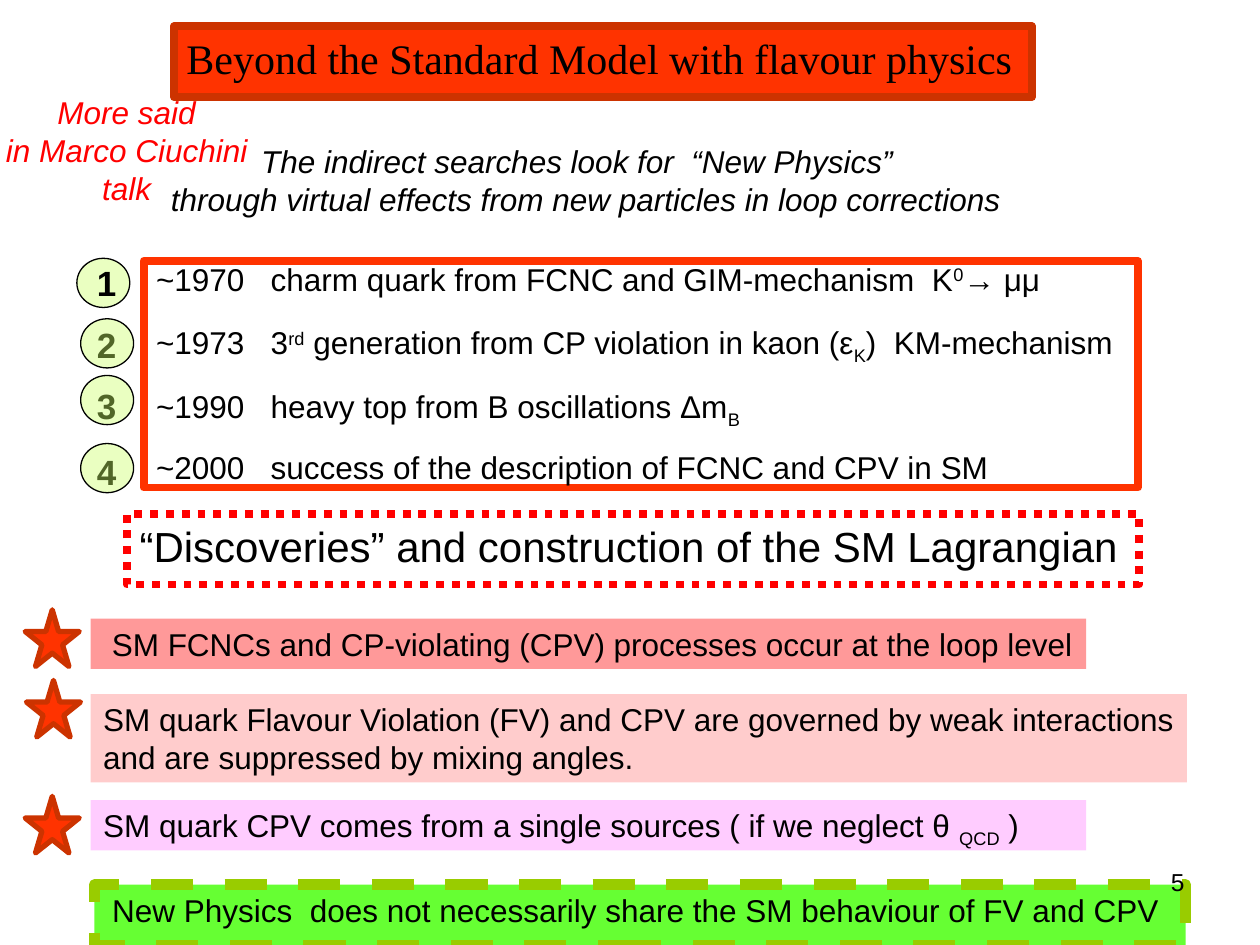
"""Build a slide on physics beyond the Standard Model with flavour."""
from dataclasses import dataclass
from typing import NamedTuple, Optional

from lxml.etree import SubElement
from pptx import Presentation
from pptx.dml.color import RGBColor
from pptx.enum.dml import MSO_LINE
from pptx.enum.shapes import MSO_SHAPE as Preset
from pptx.enum.text import MSO_ANCHOR as Anchor, MSO_AUTO_SIZE as AutoSize, PP_ALIGN as Align
from pptx.oxml.ns import qn
from pptx.util import Emu, Pt

PX = 9144
COLORS = {
    "black": "000000", "red": "FF0000", "orange": "FF3300", "rust": "CC3300",
    "salmon": "FF9999", "rose": "FFCCCC", "lilac": "FFCCFF",
    "green": "66FF33", "olive": "99CC00", "lime": "CCFF66",
}


class Area(NamedTuple):
    left: int
    top: int
    width: int
    height: int


class Span(NamedTuple):
    text: str
    baseline: int = 0


class Outline(NamedTuple):
    color: str
    width: float
    dash: Optional[MSO_LINE] = None


@dataclass(frozen=True)
class TextStyle:
    size: int = 18
    color: str = "black"
    font: str = "Arial"
    bold: bool = False
    italic: bool = False
    align: Align = Align.LEFT
    wrap: bool = False
    line_spacing: float = 1.0
    gap: int = 0


@dataclass(frozen=True)
class Panel:
    area: Area
    lines: tuple
    style: TextStyle = TextStyle()
    fill: Optional[str] = None
    outline: Optional[Outline] = None


def rgb(name: str) -> RGBColor:
    return RGBColor.from_string(COLORS[name])


def emu(area: Area) -> list:
    return [Emu(value * PX) for value in area]


def apply(target, values: dict) -> None:
    for name, value in values.items():
        setattr(target, name, value)


def paint(shape, fill: Optional[str], outline: Optional[Outline]) -> None:
    if fill:
        shape.fill.solid()
        shape.fill.fore_color.rgb = rgb(fill)
    else:
        shape.fill.background()
    if outline:
        shape.line.color.rgb = rgb(outline.color)
        apply(shape.line, {"width": Pt(outline.width), "dash_style": outline.dash})
    else:
        shape.line.fill.background()


def write(shape, lines: tuple, style: TextStyle) -> None:
    frame = shape.text_frame
    apply(frame, {
        "word_wrap": style.wrap, "auto_size": AutoSize.NONE, "vertical_anchor": Anchor.TOP,
    })
    for index, line in enumerate(lines):
        para = frame.add_paragraph() if index else frame.paragraphs[0]
        apply(para, {
            "alignment": style.align, "line_spacing": style.line_spacing,
            "space_before": Pt(style.gap if index else 0),
        })
        for part in (Span(line),) if isinstance(line, str) else line:
            span = para.add_run()
            span.text = part.text
            apply(span.font, {
                "size": Pt(style.size), "name": style.font,
                "bold": style.bold, "italic": style.italic,
            })
            span.font.color.rgb = rgb(style.color)
            if part.baseline:
                span._r.get_or_add_rPr().set("baseline", str(part.baseline * 1000))


def add_preset(page, preset: Preset, area: Area, fill: Optional[str], outline: Optional[Outline]):
    shape = page.shapes.add_shape(preset, *emu(area))
    shape.shadow.inherit = False
    paint(shape, fill, outline)
    return shape


def add_panel(page, panel: Panel) -> None:
    if panel.fill or panel.outline:
        box = add_preset(page, Preset.RECTANGLE, panel.area, panel.fill, panel.outline)
    else:
        box = page.shapes.add_textbox(*emu(panel.area))
    write(box, panel.lines, panel.style)


def add_badge(page, left: int, top: int) -> None:
    area = Area(left, top, 42, 39)
    badge = add_preset(page, Preset.OVAL, area, "lime", Outline("black", 0.75))
    color = badge._element.spPr.find(qn("a:solidFill"))[0]
    SubElement(color, qn("a:alpha"), val="40000")


def set_title(page) -> None:
    title = page.shapes.title
    apply(title, dict(zip(("left", "top", "width", "height"), emu(Area(138, 21, 681, 56)))))
    paint(title, "orange", Outline("rust", 4.5))
    write(title, ("Beyond the Standard Model with flavour physics",),
          TextStyle(size=24, font="Times New Roman"))


HISTORY = (
    (Span("~1970   charm quark from FCNC and GIM-mechanism  K"), Span("0", 30), Span("→ μμ")),
    (Span("~1973   3"), Span("rd", 30), Span(" generation from CP violation in kaon (ε"),
     Span("K", -25), Span(")  KM-mechanism")),
    (Span("~1990   heavy top from B oscillations Δm"), Span("B", -25)),
    "~2000   success of the description of FCNC and CPV in SM",
)

PANELS = (
    Panel(Area(75, 108, 780, 70),
          ("The indirect searches look for  “New Physics”  ",
           "through virtual effects from new particles in loop corrections"),
          TextStyle(italic=True, align=Align.CENTER, wrap=True)),
    Panel(Area(114, 207, 789, 180), HISTORY,
          TextStyle(wrap=True, line_spacing=0.8, gap=17), outline=Outline("orange", 4.5)),
    Panel(Area(72, 491, 790, 40),
          (" SM FCNCs and CP-violating (CPV) processes occur at the loop level",), fill="salmon"),
    Panel(Area(72, 551, 870, 70),
          ("SM quark Flavour Violation (FV) and CPV are governed by weak interactions",
           "and are suppressed by mixing angles."), fill="rose"),
    Panel(Area(72, 635, 790, 40),
          ((Span("SM quark CPV comes from a single sources ( if we neglect θ "),
            Span("QCD", -25), Span(" )")),), TextStyle(wrap=True), "lilac"),
    Panel(Area(75, 702, 866, 48),
          ("New Physics  does not necessarily share the SM behaviour of FV and CPV ",),
          TextStyle(align=Align.CENTER), "green", Outline("olive", 6, MSO_LINE.DASH)),
    Panel(Area(101, 408, 803, 56), ("“Discoveries” and construction of the SM Lagrangian",),
          TextStyle(size=24), outline=Outline("red", 4.5, MSO_LINE.ROUND_DOT)),
    Panel(Area(717, 683, 233, 52), ("5",),
          TextStyle(size=14, align=Align.RIGHT, wrap=True)),
    Panel(Area(-7, 69, 215, 101), ("More said", "in Marco Ciuchini", "talk"),
          TextStyle(color="red", italic=True, align=Align.CENTER)),
)
STARS = ((20, 484), (21, 540), (20, 632))
FIRST_BADGE, *COVERING_BADGES = ((61, 205), (64, 253), (64, 298), (64, 352))
NUMBER_TOPS = (203, 252, 300, 353)


def main() -> None:
    deck = Presentation()
    apply(deck, {"slide_width": Emu(1000 * PX), "slide_height": Emu(750 * PX)})
    page = deck.slides.add_slide(deck.slide_layouts[5])
    set_title(page)
    for panel in PANELS:
        add_panel(page, panel)
    for left, top in STARS:
        add_preset(page, Preset.STAR_5_POINT, Area(left, top, 43, 45),
                   "orange", Outline("rust", 3))
    add_badge(page, *FIRST_BADGE)
    for number, top in enumerate(NUMBER_TOPS, 1):
        add_panel(page, Panel(Area(67, top, 36, 43), (str(number),),
                              TextStyle(size=20, bold=True)))
    for left, top in COVERING_BADGES:
        add_badge(page, left, top)
    deck.save("out.pptx")


if __name__ == "__main__":
    main()
